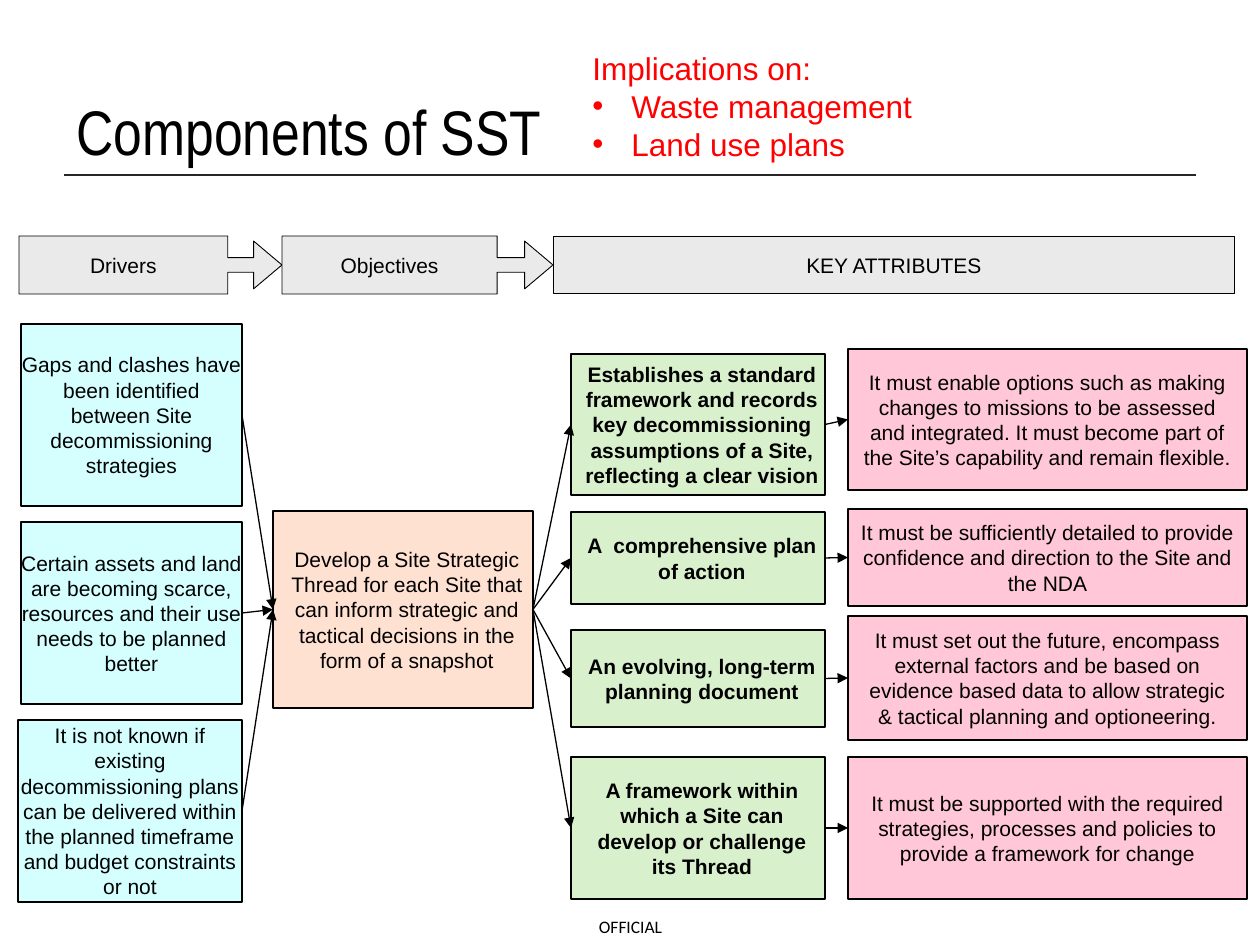
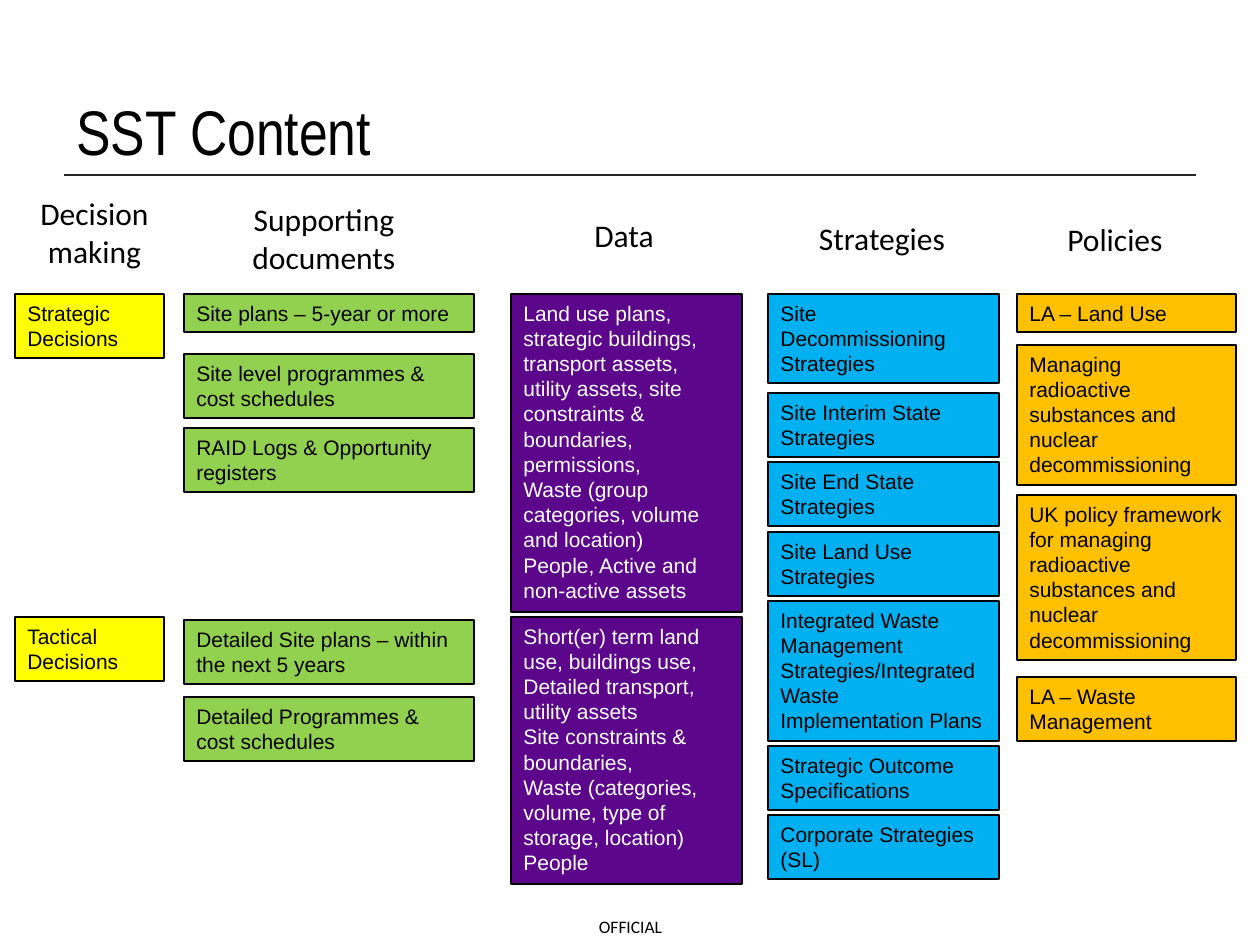
"""Build two slides on the components and content of a Site Strategic Thread."""
from lxml.etree import SubElement
from pptx import Presentation
from pptx.dml.color import RGBColor
from pptx.enum.shapes import MSO_CONNECTOR, MSO_SHAPE
from pptx.enum.text import MSO_ANCHOR, MSO_AUTO_SIZE, PP_ALIGN
from pptx.oxml.ns import qn
from pptx.util import Pt

SCALE = 914400 / 126
BLACK, WHITE, RED, RULE = "000000", "FFFFFF", "FF0000", "262626"
CYAN, PEACH, MINT, PINK, GREY = "D5FFFF", "FFE1D2", "D9F0CD", "FFC7D8", "EAEAEA"
YELLOW, GREEN, PURPLE, BLUE, AMBER = "FFFF00", "92D050", "5C068C", "00B0F0", "FFC000"

TOP, LEFT, BOTTOM, RIGHT = range(4)
NARROW_RIGHT = (13, 6, 5, 6)
NO_SIDES = (0, 6, 0, 6)
NO_MARGINS = (0, 0, 0, 0)
CALLOUT_SHAPE = (0.251, 0.412, 0.489, 0.794)

STAGES = [
    ("Drivers", 19, 263, MSO_SHAPE.RIGHT_ARROW_CALLOUT),
    ("Objectives", 282, 271, MSO_SHAPE.RIGHT_ARROW_CALLOUT),
    ("KEY ATTRIBUTES", 553, 682, MSO_SHAPE.RECTANGLE),
]
IMPLICATIONS = ("Implications on:", ["Waste management", "Land use plans"])
DRIVERS = [
    (21, 221, "Gaps and clashes have been identified between Site decommissioning strategies"),
    (21, 221, "Certain assets and land are becoming scarce, resources and their use needs to "
              "be planned better"),
    (18, 224, "It is not known if existing decommissioning plans can be delivered within the "
              "planned timeframe and budget constraints or not"),
]
OBJECTIVE = ("Develop a Site Strategic Thread for each Site that can inform strategic and "
             "tactical decisions in the form of a snapshot")
ATTRIBUTES = [
    ((354, 141, "Establishes a standard framework and records key decommissioning assumptions "
                "of a Site, reflecting a clear vision"),
     (349, 141, "It must enable options such as making changes to missions to be assessed and "
                "integrated. It must become part of the Site’s capability and remain flexible.")),
    ((512, 92, "A  comprehensive plan of action"),
     (509, 97, "It must be sufficiently detailed to provide confidence and direction to the "
               "Site and the NDA")),
    ((630, 97, "An evolving, long-term planning document"),
     (616, 124, "It must set out the future, encompass external factors and be based on "
                "evidence based data to allow strategic & tactical planning and optioneering.")),
    ((757, 142, "A framework within which a Site can develop or challenge its Thread"),
     (757, 142, "It must be supported with the required strategies, processes and policies to "
                "provide a framework for change")),
]

# Each column: heading, heading place, box left and width, fill, text colour,
# then boxes as top, line count and paragraphs.
COLUMNS = [
    ("Decision making", (5, 202, 179), (15, 149), YELLOW, BLACK, [
        (294, 2, ["Strategic Decisions"]),
        (617, 2, ["Tactical Decisions"]),
    ]),
    ("Supporting documents", (184, 208, 280), (184, 290), GREEN, BLACK, [
        (294, 1, ["Site plans – 5-year or more"]),
        (354, 2, ["Site level programmes & cost schedules"]),
        (428, 2, ["RAID Logs & Opportunity registers"]),
        (620, 2, ["Detailed Site plans – within the next 5 years"]),
        (697, 2, ["Detailed Programmes & cost schedules"]),
    ]),
    ("Data", (571, 205, 106), (511, 231), PURPLE, WHITE, [
        (294, 12, ["Land use plans, strategic buildings, transport assets, utility assets, "
                   "site constraints & boundaries, permissions,",
                   "Waste (group categories, volume and location)",
                   "People, Active and non-active assets"]),
        (617, 10, ["Short(er) term land use, buildings use,",
                   "Detailed transport, utility assets",
                   "Site constraints & boundaries,",
                   "Waste (categories, volume, type of storage, location)",
                   "People"]),
    ]),
    ("Strategies", (799, 208, 166), (768, 231), BLUE, BLACK, [
        (294, 3, ["Site Decommissioning Strategies"]),
        (393, 2, ["Site Interim State Strategies"]),
        (462, 2, ["Site End State Strategies"]),
        (532, 2, ["Site Land Use Strategies"]),
        (601, 5, ["Integrated Waste Management Strategies/Integrated Waste "
                  "Implementation Plans"]),
        (746, 2, ["Strategic Outcome Specifications"]),
        (815, 2, ["Corporate Strategies (SL)"]),
    ]),
    ("Policies", (1032, 209, 166), (1017, 219), AMBER, BLACK, [
        (294, 1, ["LA – Land Use"]),
        (345, 5, ["Managing radioactive substances and nuclear decommissioning"]),
        (495, 6, ["UK policy framework for managing radioactive substances and nuclear "
                  "decommissioning"]),
        (677, 2, ["LA – Waste Management"]),
    ]),
]


def px(*lengths):
    return [round(length * SCALE) for length in lengths]


def colour(code):
    return RGBColor.from_string(code)


def write(shape, paragraphs, size=12, font="Arial", ink=BLACK, bold=False, centred=True,
          margins=None, wrap=True, grow=False):
    frame = shape.text_frame
    frame.word_wrap = wrap
    frame.vertical_anchor = MSO_ANCHOR.MIDDLE if centred else MSO_ANCHOR.TOP
    frame.auto_size = MSO_AUTO_SIZE.SHAPE_TO_FIT_TEXT if grow else MSO_AUTO_SIZE.NONE
    if margins:
        (frame.margin_left, frame.margin_top,
         frame.margin_right, frame.margin_bottom) = px(*margins)
    for index, words in enumerate(paragraphs):
        paragraph = frame.add_paragraph() if index else frame.paragraphs[0]
        paragraph.alignment = PP_ALIGN.CENTER if centred else PP_ALIGN.LEFT
        run = paragraph.add_run()
        run.text = words
        run.font.size, run.font.name, run.font.bold = Pt(size), font, bold
        run.font.color.rgb = colour(ink)
    return shape


def add_label(slide, place, paragraphs, **style):
    return write(slide.shapes.add_textbox(*px(*place)), paragraphs, **style)


def add_box(slide, place, paragraphs, fill, preset=MSO_SHAPE.RECTANGLE, border=0.75, **style):
    box = slide.shapes.add_shape(preset, *px(*place))
    box.shadow.inherit = False
    box.fill.solid()
    box.fill.fore_color.rgb = colour(fill)
    box.line.color.rgb = colour(BLACK)
    box.line.width = Pt(border)
    return write(box, paragraphs, **style)


def add_line(slide, ends=(0, 0, 0, 0), ink=BLACK):
    line = slide.shapes.add_connector(MSO_CONNECTOR.STRAIGHT, *px(*ends))
    line.line.color.rgb = colour(ink)
    line.line.width = Pt(0.75)
    SubElement(line._element.spPr, qn("a:effectLst"))
    return line


def add_arrow(slide, source, target):
    arrow = add_line(slide)
    arrow.begin_connect(source, RIGHT)
    arrow.end_connect(target, LEFT)
    outline = arrow._element.spPr.find(qn("a:ln"))
    SubElement(outline, qn("a:tailEnd"), type="triangle")


def add_bullet(paragraph, indent):
    properties = paragraph._p.get_or_add_pPr()
    properties.set("marL", str(indent))
    properties.set("indent", str(-indent))
    SubElement(properties, qn("a:buFont"), typeface="Arial")
    SubElement(properties, qn("a:buChar"), char="•")


def add_framed_slide(deck, title):
    slide = deck.slides.add_slide(deck.slide_layouts[6])
    add_label(slide, (64, 86, 1132, 118), [title], size=36, font="Arial Narrow", centred=False)
    add_line(slide, (64, 175, 1196, 175), RULE)
    add_label(slide, (580, 908, 101, 37), ["OFFICIAL"], size=10, font="Calibri",
              margins=NO_MARGINS)
    return slide


def build_components(deck):
    slide = add_framed_slide(deck, "Components of SST")

    for name, left, width, preset in STAGES:
        stage = add_box(slide, (left, 236, width, 58), [name], GREY, preset, border=0.5,
                        wrap=False)
        if preset == MSO_SHAPE.RIGHT_ARROW_CALLOUT:
            for index, value in enumerate(CALLOUT_SHAPE):
                stage.adjustments[index] = value

    objective = add_box(slide, (273, 511, 260, 197), [OBJECTIVE], PEACH, margins=NARROW_RIGHT)
    for row, (left, width, reason) in enumerate(DRIVERS):
        driver = add_box(slide, (left, 324 + 198 * row, width, 182), [reason], CYAN,
                         margins=NO_SIDES)
        add_arrow(slide, driver, objective)

    for (top, height, name), (need_top, need_height, need) in ATTRIBUTES:
        attribute = add_box(slide, (571, top, 254, height), [name], MINT, bold=True,
                            margins=NARROW_RIGHT)
        requirement = add_box(slide, (848, need_top, 399, need_height), [need], PINK)
        add_arrow(slide, objective, attribute)
        add_arrow(slide, attribute, requirement)

    lead, effects = IMPLICATIONS
    implications = add_label(slide, (580, 43, 407, 127), [lead, *effects], size=18, ink=RED,
                             centred=False, grow=True)
    for paragraph in implications.text_frame.paragraphs[1:]:
        add_bullet(paragraph, *px(39))


def build_content(deck):
    slide = add_framed_slide(deck, "SST Content")
    for heading, heading_place, (left, width), fill, ink, entries in COLUMNS:
        add_label(slide, (*heading_place, 59), [heading], size=18, font="Calibri",
                  margins=NO_MARGINS)
        for top, lines, paragraphs in entries:
            height = round(13 + 25.4 * lines)
            add_box(slide, (left, top, width, height), paragraphs, fill, ink=ink,
                    centred=False, grow=True)


def main():
    deck = Presentation()
    deck.slide_width, deck.slide_height = px(1260, 945)
    build_components(deck)
    build_content(deck)
    deck.save("out.pptx")


if __name__ == "__main__":
    main()
